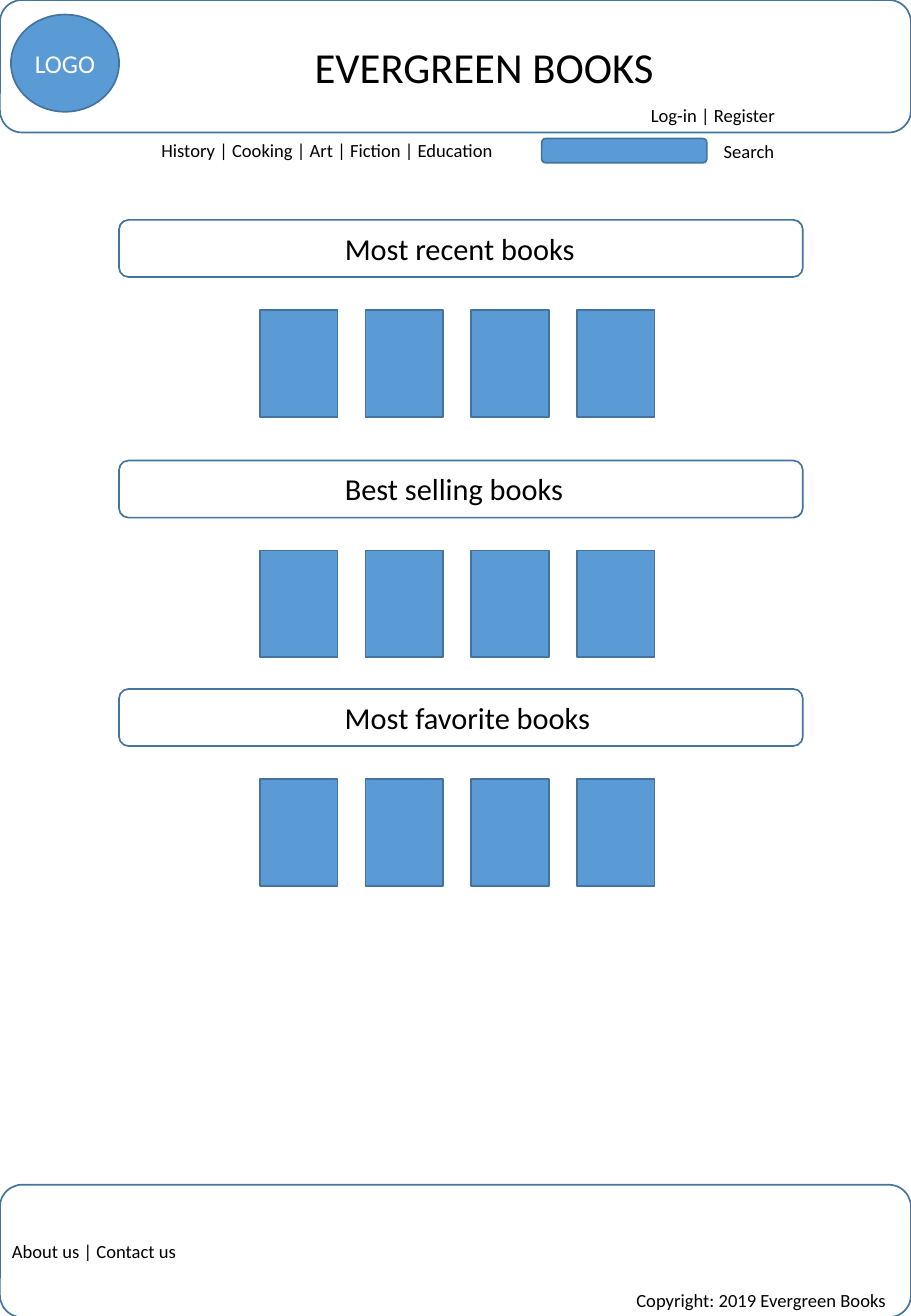
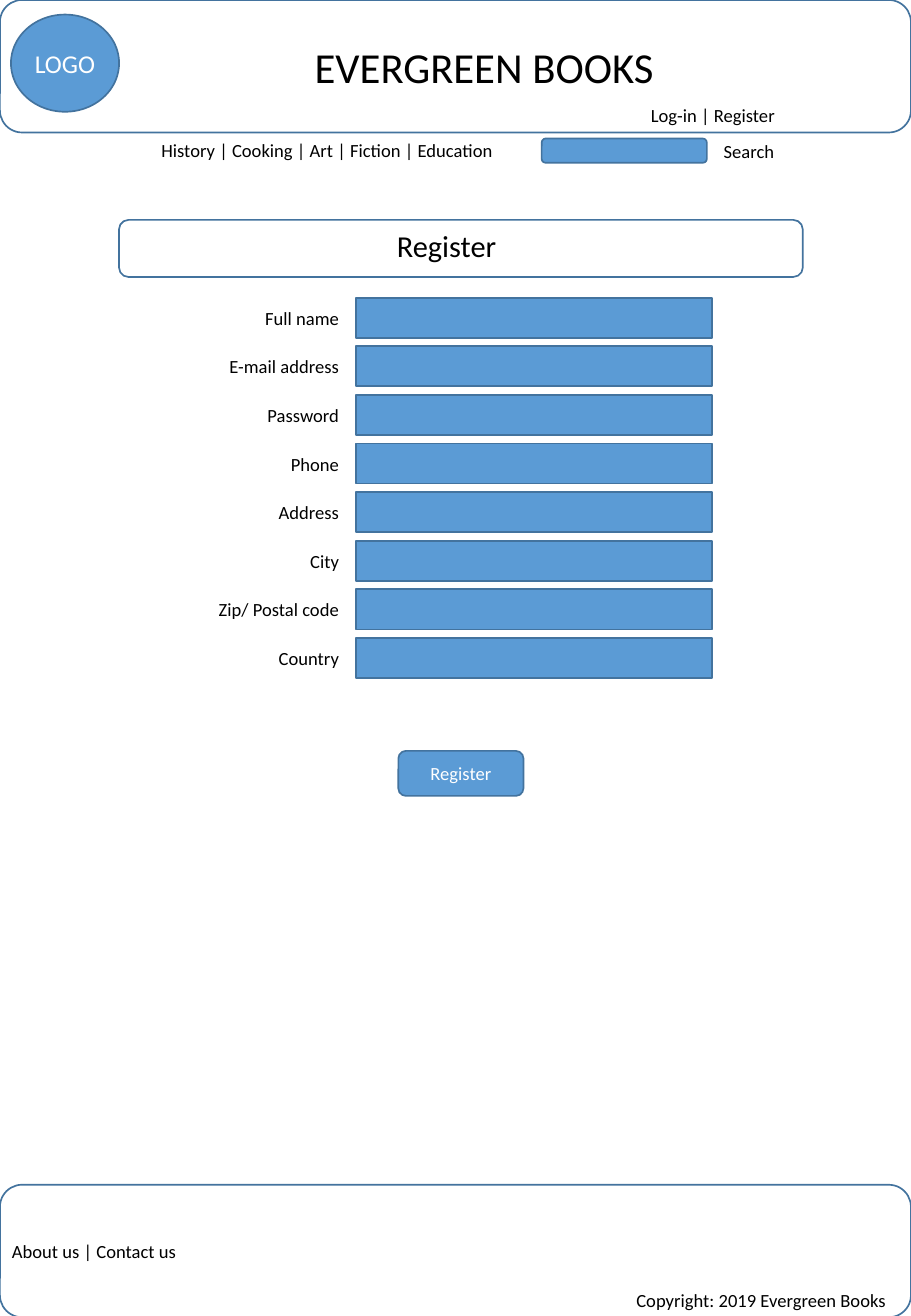
import pptx
import pptx.dml.color
import pptx.enum.shapes
import pptx.enum.text
import pptx.util

Inches = pptx.util.Inches
Shapes = pptx.enum.shapes.MSO_SHAPE
Align = pptx.enum.text.PP_ALIGN
Anchor = pptx.enum.text.MSO_ANCHOR

COLORS = {"fill": "5B9BD5", "line": "43739E", "text": "000000", "light": "FFFFFF"}
FONT = "Calibri"
SITE_NAME = "EVERGREEN BOOKS"
BODY_SIZE, HEADING_SIZE = 11, 18
LABEL_HEIGHT = 0.29

SITE_LABELS = [
    ("Log-in | Register", 5.26, 0.8, 1.23),
    ("History | Cooking | Art | Fiction | Education", 1.23, 1.09, 3.08),
    ("Search", 5.86, 1.1, 0.63),
    ("About us | Contact us", 0, 10.15, 1.56),
    ("Copyright: 2019 Evergreen Books", 5.14, 10.55, 2.28),
]
BOOK_SECTIONS = [
    ("Most recent books", 1.81, 2.11),
    ("Best selling books", 3.79, 2.02),
    ("Most favorite books", 5.67, 2.24),
]
BOOKS_PER_SECTION = 4
FORM_FIELDS = ["Full name", "E-mail address", "Password", "Phone",
               "Address", "City", "Zip/ Postal code", "Country"]


def color(name):
    return pptx.dml.color.RGBColor.from_string(COLORS[name])


def write(shape, text, size, color_name="text", align=Align.LEFT, wrap=False):
    frame = shape.text_frame
    frame.text = text
    frame.auto_size = pptx.enum.text.MSO_AUTO_SIZE.NONE
    frame.word_wrap = wrap
    frame.vertical_anchor = Anchor.MIDDLE
    paragraph = frame.paragraphs[0]
    paragraph.alignment = align
    paragraph.font.name = FONT
    paragraph.font.size = pptx.util.Pt(size)
    paragraph.font.color.rgb = color(color_name)


def add_label(slide, text, left, top, width, height=LABEL_HEIGHT,
              size=BODY_SIZE, align=Align.LEFT):
    box = slide.shapes.add_textbox(Inches(left), Inches(top), Inches(width), Inches(height))
    write(box, text, size, align=align)


def add_box(slide, kind, left, top, width, height, filled=True, text="", size=BODY_SIZE):
    shape = slide.shapes.add_shape(kind, Inches(left), Inches(top), Inches(width), Inches(height))
    shape.shadow.inherit = False
    if filled:
        shape.fill.solid()
        shape.fill.fore_color.rgb = color("fill")
    else:
        shape.fill.background()
    shape.line.color.rgb = color("line")
    shape.line.width = pptx.util.Pt(1)
    if text:
        frame = shape.text_frame
        frame.margin_left = frame.margin_right = Inches(0.04)
        frame.margin_top = frame.margin_bottom = Inches(0.02)
        write(shape, text, size, "light", Align.CENTER, True)


def add_heading(slide, text, top, text_left, text_top, text_width):
    add_box(slide, Shapes.ROUNDED_RECTANGLE, 0.98, top, 5.63, 0.47, filled=False)
    add_label(slide, text, text_left, text_top, text_width, 0.4, HEADING_SIZE)


def add_page(presentation):
    slide = presentation.slides.add_slide(presentation.slide_layouts[5])
    title = slide.shapes.title
    title.left, title.top = Inches(2.49), Inches(0.28)
    title.width, title.height = Inches(3.02), Inches(0.53)
    write(title, SITE_NAME, 25.3)
    for band_top in (0, 9.75):
        add_box(slide, Shapes.ROUNDED_RECTANGLE, 0, band_top, 7.5, 1.09, filled=False)
    add_box(slide, Shapes.OVAL, 0.09, 0.12, 0.89, 0.8, text="LOGO", size=15.2)
    add_box(slide, Shapes.ROUNDED_RECTANGLE, 4.46, 1.14, 1.36, 0.2)
    for text, left, top, width in SITE_LABELS:
        add_label(slide, text, left, top, width)
    return slide


def build_home(presentation):
    slide = add_page(presentation)
    for heading, top, width in BOOK_SECTIONS:
        add_heading(slide, heading, top, 2.74, top + 0.03, width)
        for book in range(BOOKS_PER_SECTION):
            add_box(slide, Shapes.RECTANGLE, 2.14 + 0.87 * book, top + 0.74, 0.64, 0.88)


def build_register(presentation):
    slide = add_page(presentation)
    add_heading(slide, "Register", 1.81, 3.17, 1.82, 1.03)
    for row, field in enumerate(FORM_FIELDS):
        top = 2.45 + 0.4 * row
        add_box(slide, Shapes.RECTANGLE, 2.93, top, 2.93, 0.33)
        add_label(slide, field, 1.69, top + 0.02, 1.2, align=Align.RIGHT)
    add_box(slide, Shapes.ROUNDED_RECTANGLE, 3.28, 6.18, 1.03, 0.37, text="Register")


def main():
    presentation = pptx.Presentation()
    presentation.slide_width = Inches(7.5)
    presentation.slide_height = Inches(10.83)
    build_home(presentation)
    build_register(presentation)
    presentation.save("out.pptx")


if __name__ == "__main__":
    main()
